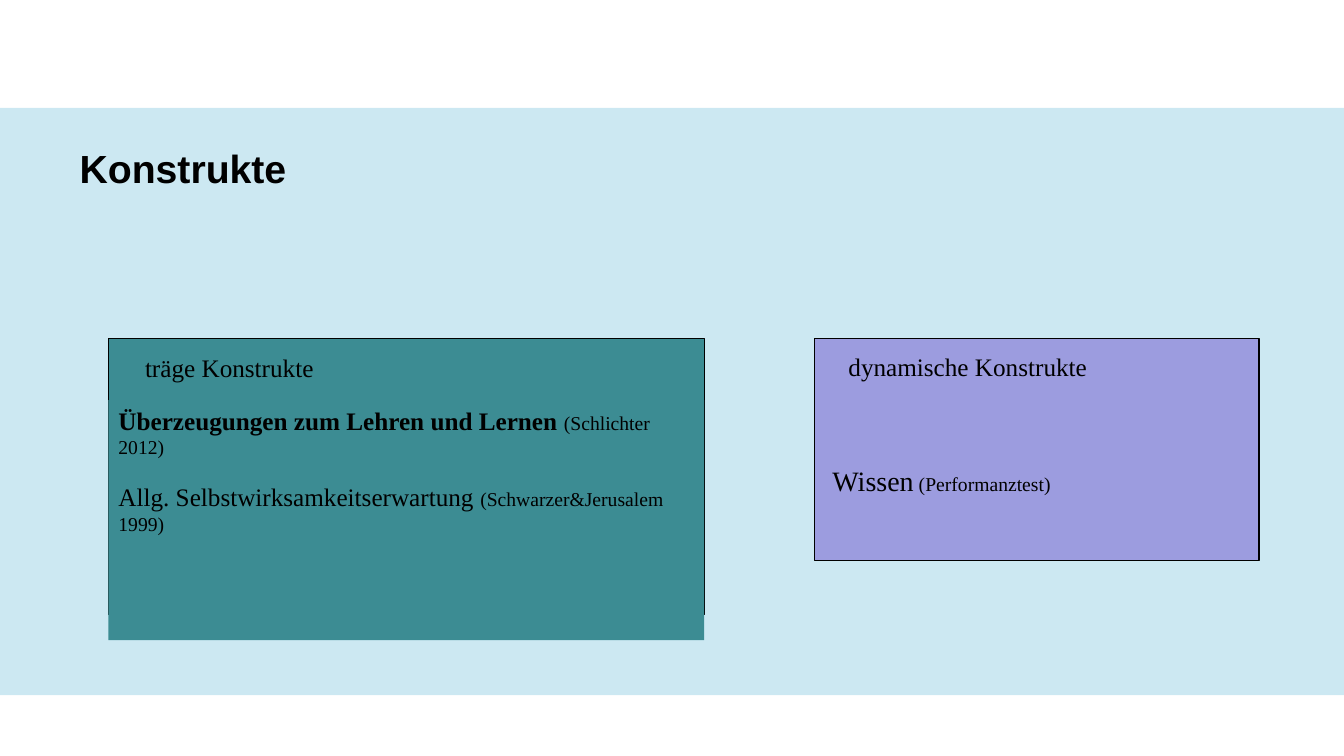
"""Build the slide on inert and dynamic constructs."""
from lxml import etree
from pptx import Presentation
from pptx.dml.color import RGBColor
from pptx.enum.shapes import MSO_SHAPE
from pptx.enum.text import MSO_ANCHOR, PP_ALIGN
from pptx.oxml.ns import qn
from pptx.util import Pt

RECT = MSO_SHAPE.RECTANGLE
TOP = MSO_ANCHOR.TOP
LEFT = PP_ALIGN.LEFT
BLACK = "000000"
BLUE = "008FBE"
TEAL = "3C8C93"
LILAC = "9C9CDF"
SERIF = "Times New Roman"


def color(value):
    """Turn a hex string into a colour."""
    return RGBColor.from_string(value)


def add_rect(shapes, box, fill, line=None):
    """Add a filled rectangle, with a thin outline if a colour is given."""
    rect = shapes.add_shape(RECT, *map(Pt, box))
    rect.shadow.inherit = False
    rect.fill.solid()
    rect.fill.fore_color.rgb = color(fill)
    if line:
        rect.line.color.rgb = color(line)
        rect.line.width = Pt(0.75)
    else:
        rect.line.fill.background()
    return rect


def fade(shape, percent):
    """Set the opacity of a solid fill."""
    tint = shape.fill._xPr.find(qn("a:solidFill"))[0]
    etree.SubElement(tint, qn("a:alpha"), val=str(percent * 1000))


def write(shape, lines, font=SERIF, gap=0):
    """Write lines of (text, size, bold) runs into a shape."""
    frame = shape.text_frame
    frame.word_wrap = True
    frame.vertical_anchor = TOP
    for index, runs in enumerate(lines):
        para = frame.add_paragraph() if index else frame.paragraphs[0]
        para.alignment = LEFT
        if index:
            para.space_before = Pt(gap)
        for text, size, bold in runs:
            run = para.add_run()
            run.text = text
            run.font.name = font
            run.font.size = Pt(size)
            run.font.bold = bold
            run.font.color.rgb = color(BLACK)


def add_title(shapes, text):
    """Add the slide title without margins."""
    title = shapes.add_textbox(Pt(56.9), Pt(99.4), Pt(862), Pt(57))
    write(title, [[(text, 28, True)]], "Arial")
    frame = title.text_frame
    frame.margin_left = frame.margin_right = 0
    frame.margin_top = frame.margin_bottom = 0
    frame.paragraphs[0].line_spacing = 1.1


def add_panel(shapes, fill, frame, head, name, body, lines):
    """Add a grouped panel with a frame, a heading and a body."""
    parts = shapes.add_group_shape().shapes
    add_rect(parts, frame, fill, BLACK)
    write(add_rect(parts, head, fill), [[(name, 18, False)]])
    write(add_rect(parts, body, fill), lines, gap=16)


def main():
    """Build and save the slide."""
    deck = Presentation()
    deck.slide_width, deck.slide_height = Pt(960), Pt(540)
    shapes = deck.slides.add_slide(deck.slide_layouts[6]).shapes
    fade(add_rect(shapes, (0, 77, 960, 419.5), BLUE), 20)
    add_title(shapes, "Konstrukte")
    add_panel(
        shapes, TEAL, (77.5, 241.8, 425.5, 197.3),
        (96.5, 248.4, 179.3, 56.2), "träge Konstrukte",
        (77.5, 285.8, 425.5, 171.4),
        [[("Überzeugungen zum Lehren und Lernen ", 18, True),
          ("(Schlichter 2012)", 14, False)],
         [("Allg. Selbstwirksamkeitserwartung ", 18, False),
          ("(Schwarzer&Jerusalem 1999)", 14, False)]])
    add_panel(
        shapes, LILAC, (581.8, 241.8, 317.5, 158.4),
        (599, 247.4, 203.8, 45.4), "dynamische Konstrukte",
        (587.5, 327.6, 300.2, 31.7),
        [[("Wissen", 20, False), (" (Performanztest)", 14, False)]])
    deck.save("out.pptx")


if __name__ == "__main__":
    main()
